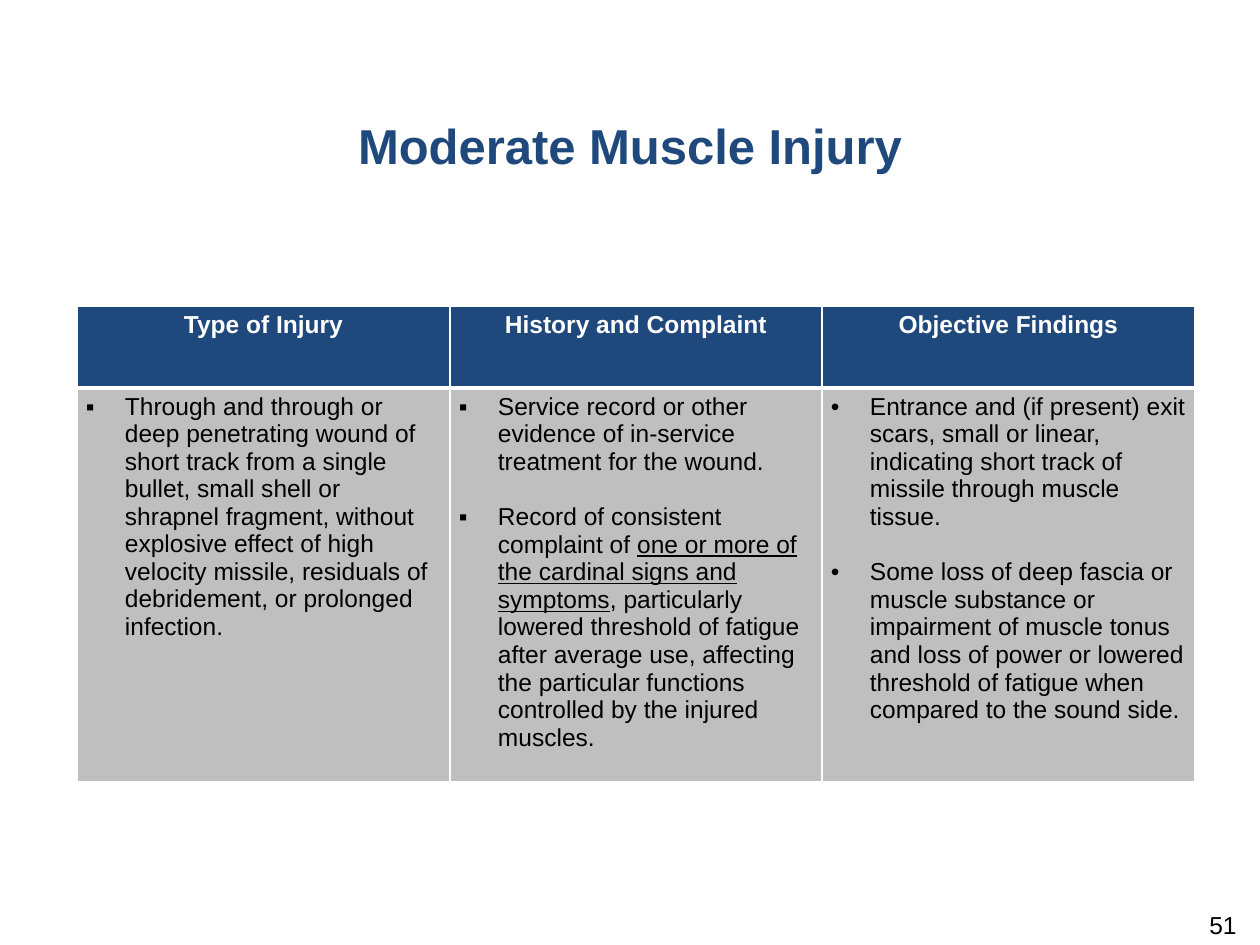
from lxml import etree
from pptx import Presentation
from pptx.dml.color import RGBColor
from pptx.enum.text import MSO_ANCHOR, PP_ALIGN
from pptx.oxml.ns import qn
from pptx.util import Pt

NAVY = RGBColor(0x1F, 0x49, 0x7D)
GREY = RGBColor(0xBF, 0xBF, 0xBF)
WHITE = RGBColor(0xFF, 0xFF, 0xFF)
BLACK = RGBColor(0, 0, 0)
CENTER, LEFT, RIGHT = PP_ALIGN.CENTER, PP_ALIGN.LEFT, PP_ALIGN.RIGHT
TOP = MSO_ANCHOR.TOP
SQUARE, DOT = "▪", "•"

HEADINGS = ["Type of Injury", "History and Complaint", "Objective Findings"]
FINDINGS = [
    (SQUARE, [
        ["Through and through or deep penetrating wound of short track from a "
         "single bullet, small shell or shrapnel fragment, without explosive "
         "effect of high velocity missile, residuals of debridement, or "
         "prolonged infection."],
    ]),
    (SQUARE, [
        ["Service record or other evidence of in-service treatment for the wound."],
        ["Record of consistent complaint of ",
         "one or more of the cardinal signs and symptoms",
         ", particularly lowered threshold of fatigue after average use, "
         "affecting the particular functions controlled by the injured muscles."],
    ]),
    (DOT, [
        ["Entrance and (if present) exit scars, small or linear, indicating "
         "short track of missile through muscle tissue."],
        ["Some loss of deep fascia or muscle substance or impairment of muscle "
         "tonus and loss of power or lowered threshold of fatigue when compared "
         "to the sound side."],
    ]),
]


def px(value):
    return round(value * 914400 / 126)


class SlideBuilder:
    font = "Arial"
    body_size = 14

    def __init__(self, page):
        self.page = page

    def style(self, span, size, color, bold=False):
        span.font.name = self.font
        span.font.size = Pt(size)
        span.font.color.rgb = color
        span.font.bold = bold

    def text(self, left, top, width, height, words, size, color, align,
             bold=False, inset_top=6):
        box = self.page.shapes.add_textbox(px(left), px(top), px(width), px(height))
        frame = box.text_frame
        frame.word_wrap = True
        frame.vertical_anchor = TOP
        frame.margin_top = px(inset_top)
        frame.text = words
        para = frame.paragraphs[0]
        para.alignment = align
        self.style(para.runs[0], size, color, bold)

    def border(self, cell, sides):
        properties = cell._tc.get_or_add_tcPr()
        for index, (side, points) in enumerate(sides):
            line = etree.Element(qn(f"a:ln{side}"), w=str(Pt(points)))
            fill = etree.SubElement(line, qn("a:solidFill"))
            etree.SubElement(fill, qn("a:srgbClr"), val=str(WHITE))
            properties.insert(index, line)

    def cell(self, cell, fill, top_border, bottom_border):
        cell.fill.solid()
        cell.fill.fore_color.rgb = fill
        cell.margin_left = cell.margin_right = px(9)
        cell.margin_top = cell.margin_bottom = px(5)
        cell.vertical_anchor = TOP
        self.border(cell, [("L", 1), ("R", 1), ("T", top_border), ("B", bottom_border)])

    def heading(self, cell, words):
        self.cell(cell, NAVY, 1, 3)
        cell.text_frame.text = words
        para = cell.text_frame.paragraphs[0]
        para.alignment = CENTER
        self.style(para.runs[0], self.body_size, WHITE, True)

    def bullet(self, para, mark):
        properties = para._p.get_or_add_pPr()
        properties.set("marL", str(px(39)))
        properties.set("indent", str(-px(39)))
        etree.SubElement(properties, qn("a:buFont"), typeface=self.font)
        etree.SubElement(properties, qn("a:buChar"), char=mark)

    def bullets(self, cell, mark, items):
        self.cell(cell, GREY, 3, 1)
        frame = cell.text_frame
        for index, parts in enumerate(items):
            para = frame.add_paragraph() if index else frame.paragraphs[0]
            self.bullet(para, mark)
            para.alignment = LEFT
            if index:
                para.space_before = Pt(16)
            for position, words in enumerate(parts):
                span = para.add_run()
                span.text = words
                self.style(span, self.body_size, BLACK)
                if position == 1:
                    span.font.underline = True

    def table(self, left, top, widths, heights, headings, findings):
        frame = self.page.shapes.add_table(
            len(heights), len(widths), px(left), px(top),
            px(sum(widths)), px(sum(heights)))
        table = frame.table
        table.horz_banding = False
        for column, width in zip(table.columns, widths):
            column.width = px(width)
        for row, height in zip(table.rows, heights):
            row.height = px(height)
        for column, (words, (mark, items)) in enumerate(zip(headings, findings)):
            self.heading(table.cell(0, column), words)
            self.bullets(table.cell(1, column), mark, items)


def main():
    deck = Presentation()
    deck.slide_width, deck.slide_height = px(1260), px(945)
    builder = SlideBuilder(deck.slides.add_slide(deck.slide_layouts[6]))
    builder.text(0, 110, 1260, 150, "Moderate Muscle Injury", 28, NAVY, CENTER, bold=True)
    builder.text(955, 910, 294, 50, "51", 14, BLACK, RIGHT, inset_top=0)
    builder.table(77, 306, [373, 372, 373], [82, 394], HEADINGS, FINDINGS)
    deck.save("out.pptx")


if __name__ == "__main__":
    main()
